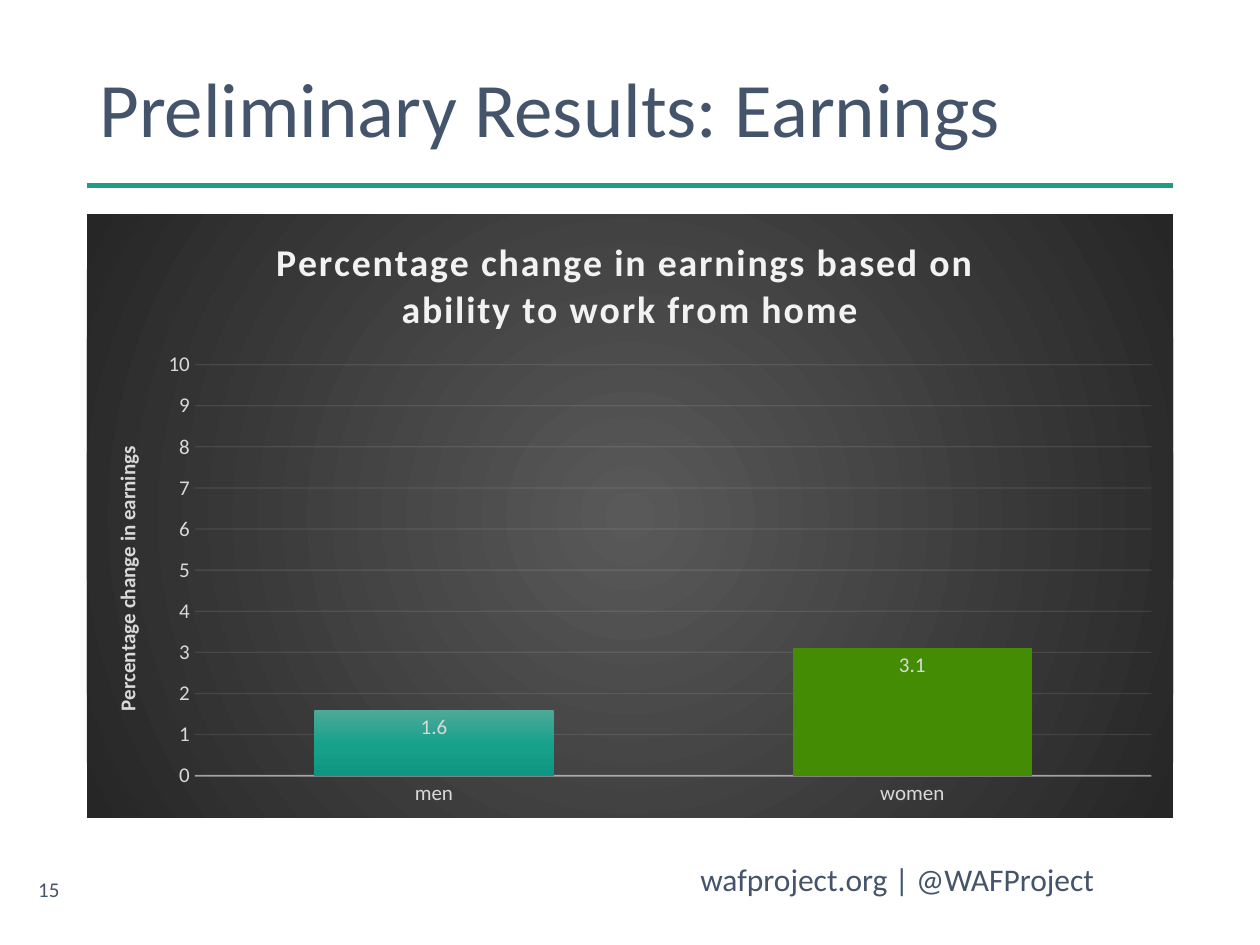
from lxml import etree
from pptx import Presentation
from pptx import util as u
from pptx.chart.data import CategoryChartData
from pptx.dml.color import RGBColor
from pptx.enum import chart as ch, shapes, text
from pptx.oxml import parse_xml
from pptx.oxml.ns import nsdecls, qn

W, H = u.Inches(10), u.Inches(7.5)
LEFT, WIDTH = int(W * 0.069), int(W * 0.862)
SLATE, TEAL, GREEN, PALE, GREY = "44546A", "1E9C89", "458C05", "F2F2F2", "D9D9D9"
rgb = RGBColor.from_string


def style(font, size, color, bold=False):
    for key, value in dict(name="Calibri", size=u.Pt(size), bold=bold).items():
        setattr(font, key, value)
    font.color.rgb = rgb(color)


def gradient(stops, direction):
    """Return a chart spPr with a gradient fill and no outline."""
    gs = "".join(f'<a:gs pos="{pos * 1000}"><a:srgbClr val="{c}"/></a:gs>' for pos, c in stops)
    return parse_xml(f'<c:spPr {nsdecls("c", "a")}><a:gradFill><a:gsLst>{gs}</a:gsLst>'
                     f'{direction}</a:gradFill><a:ln><a:noFill/></a:ln></c:spPr>')


prs = Presentation()
prs.slide_width, prs.slide_height = W, H
s = prs.slides.add_slide(prs.slide_layouts[6])

# Texts: wording, left, top, width, height (inches), size, anchor, alignment
top, middle = text.MSO_ANCHOR.TOP, text.MSO_ANCHOR.MIDDLE
left, right = text.PP_ALIGN.LEFT, text.PP_ALIGN.RIGHT
for words, x, y, w, h, size, anchor, align in [
    ("wafproject.org | @WAFProject", 5.46, 6.78, 5.94, 0.4, 18, top, left),
    ("Preliminary Results: Earnings", 0.69, 0.4, 8.62, 0.98, 44, middle, left),
    ("15", 0.14, 6.86, 0.43, 0.4, 12, middle, right),
]:
    tf = s.shapes.add_textbox(*map(u.Inches, (x, y, w, h))).text_frame
    tf.word_wrap, tf.vertical_anchor = True, anchor
    p = tf.paragraphs[0]
    p.alignment = align
    if size == 44:
        p.line_spacing = 0.9
    r = p.add_run()
    r.text = words
    style(r.font, size, SLATE)

# Rule under the title
rule_y = int(H * 0.196)
rule = s.shapes.add_connector(shapes.MSO_CONNECTOR.STRAIGHT, LEFT, rule_y, LEFT + WIDTH, rule_y)
rule.line.color.rgb, rule.line.width = rgb(TEAL), u.Pt(3)
etree.SubElement(rule.element.spPr, qn("a:effectLst"))

# Earnings chart
data = CategoryChartData(number_format="#,##0.0")
data.categories = ["men", "women"]
data.add_series("Series 1", [1.6, 3.1])
chart = s.shapes.add_chart(ch.XL_CHART_TYPE.COLUMN_CLUSTERED, LEFT, u.Inches(1.7),
                           WIDTH, u.Inches(4.79), data).chart
style(chart.font, 10, "000000")
chart.has_legend = False
backdrop = gradient([(0, "595959"), (100, "262626")],
                    '<a:path path="circle"><a:fillToRect l="50000" t="50000" '
                    'r="50000" b="50000"/></a:path>')
chart._chartSpace.find(qn("c:chart")).addnext(backdrop)

cat, val = chart.category_axis, chart.value_axis
for owner, words, size, color, spacing in [
    (chart, "Percentage change in earnings based on \nability to work from home", 21.6, PALE, 100),
    (val, "Percentage change in earnings", 12, GREY, 0),
]:
    owner.has_title = True
    tf = (chart.chart_title if owner is chart else val.axis_title).text_frame
    tf.text = words
    for p in tf.paragraphs:
        for r in p.runs:
            style(r.font, size, color, True)
            r.font._element.set("spc", str(spacing))

for axis in (cat, val):
    axis.major_tick_mark = axis.minor_tick_mark = ch.XL_TICK_MARK.NONE
    style(axis.tick_labels.font, 12, GREY)
val.minimum_scale, val.maximum_scale, val.major_unit = 0, 10, 1
val.tick_labels.number_format, val.tick_labels.number_format_is_linked = "0", False
val.format.line.fill.background()
for line, width, opacity in [(cat.format.line, 1, 54), (val.major_gridlines.format.line, 0.75, 10)]:
    line.color.rgb, line.width = rgb(PALE), u.Pt(width)
    clr = line._ln.find(".//" + qn("a:srgbClr"))
    etree.SubElement(clr, qn("a:alpha")).set("val", str(opacity * 1000))

plot = chart.plots[0]
plot.gap_width, plot.overlap, plot.vary_by_categories = 100, -24, False
ser = plot.series[0]
ser.format.fill.solid()
bars = gradient([(0, "4EA997"), (50, "18A28D"), (100, "0F9682")], '<a:lin ang="5400000" scaled="0"/>')
old = ser._element.find(qn("c:spPr"))
old.getparent().replace(old, bars)
women = ser.points[1].format
women.fill.solid()
women.fill.fore_color.rgb = rgb(GREEN)
women.line.fill.background()

labels = ser.data_labels
for key, value in dict(show_value=True, number_format="#,##0.0", number_format_is_linked=False,
                       position=ch.XL_LABEL_POSITION.INSIDE_END).items():
    setattr(labels, key, value)
style(labels.font, 12, GREY)

prs.save("out.pptx")
